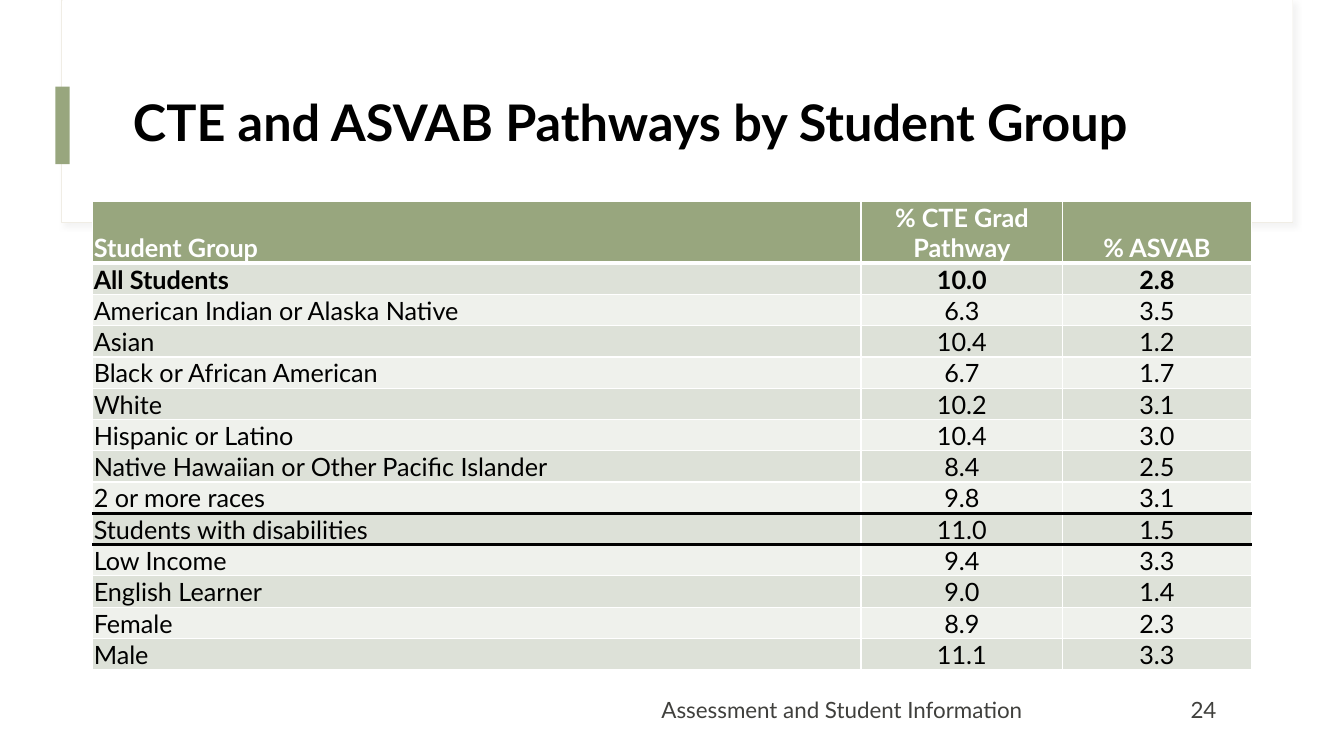
from dataclasses import dataclass
from typing import Optional

import pptx
import pptx.dml.color
import pptx.enum.shapes
import pptx.enum.text
import pptx.oxml
import pptx.oxml.ns
import pptx.util
from pptx.util import Inches

FONT = "Lato"
GREEN, DARK_BAND, LIGHT_BAND = "98A67E", "DDE1D8", "EFF1EC"
WHITE, BLACK, GREY = "FFFFFF", "000000", "40403D"
ALIGN = pptx.enum.text.PP_ALIGN
ANCHOR = pptx.enum.text.MSO_ANCHOR


@dataclass
class Panel:
    left: float
    top: float
    width: float
    height: float
    fill: str
    line: Optional[str] = None
    shadow: bool = False


@dataclass
class Label:
    text: str
    left: float
    top: float
    width: float
    height: float
    size: float = 16
    color: str = GREY
    bold: bool = False
    align: ALIGN = ALIGN.LEFT
    line_spacing: float = 1.0


@dataclass
class GroupRow:
    name: str
    cte: str
    asvab: str
    ruled_above: bool = False
    ruled_below: bool = False


PANELS = [
    Panel(0.61, 0, 12.21, 2.21, WHITE, line="F0EDE5", shadow=True),
    Panel(0.62, 0, 12.2, 2.2, WHITE),
    Panel(0.55, 0.86, 0.14, 0.77, GREEN),
]
LABELS = [
    Label("CTE and ASVAB Pathways by Student Group", 1.22, 0.6, 11.12, 1.29,
          size=36, color=BLACK, bold=True, line_spacing=0.9),
    Label("Assessment and Student Information", 3.88, 6.84, 6.36, 0.4, align=ALIGN.RIGHT),
    Label("24", 11.71, 6.84, 0.7, 0.4),
]
COLUMN_WIDTHS = [7.62, 2, 1.87]
GROUP_ROWS = [
    GroupRow("Student Group", "% CTE Grad Pathway", "% ASVAB"),
    GroupRow("All Students", "10.0", "2.8"),
    GroupRow("American Indian or Alaska Native", "6.3", "3.5"),
    GroupRow("Asian", "10.4", "1.2"),
    GroupRow("Black or African American", "6.7", "1.7"),
    GroupRow("White", "10.2", "3.1"),
    GroupRow("Hispanic or Latino", "10.4", "3.0"),
    GroupRow("Native Hawaiian or Other Pacific Islander", "8.4", "2.5"),
    GroupRow("2 or more races", "9.8", "3.1", ruled_below=True),
    GroupRow("Students with disabilities", "11.0", "1.5", ruled_above=True, ruled_below=True),
    GroupRow("Low Income", "9.4", "3.3", ruled_above=True),
    GroupRow("English Learner", "9.0", "1.4"),
    GroupRow("Female", "8.9", "2.3"),
    GroupRow("Male", "11.1", "3.3"),
]


def rgb(color: str) -> pptx.dml.color.RGBColor:
    return pptx.dml.color.RGBColor.from_string(color)


def write_text(frame, text: str, *, size: float, color: str, bold: bool = False,
               align: ALIGN = ALIGN.LEFT, line_spacing: float = 1.0) -> None:
    frame.word_wrap = True
    paragraph = frame.paragraphs[0]
    paragraph.alignment = align
    paragraph.line_spacing = line_spacing
    run = paragraph.add_run()
    run.text = text
    run.font.name = FONT
    run.font.size = pptx.util.Pt(size)
    run.font.bold = bold
    run.font.color.rgb = rgb(color)


def add_soft_shadow(shape) -> None:
    effects = shape._element.spPr.find(pptx.oxml.ns.qn("a:effectLst"))
    effects.append(pptx.oxml.parse_xml(
        f'<a:outerShdw {pptx.oxml.ns.nsdecls("a")} blurRad="50800" dist="38100" '
        'dir="2700000" algn="tl" rotWithShape="0"><a:srgbClr val="D9D9D9">'
        '<a:alpha val="30000"/></a:srgbClr></a:outerShdw>'))


def draw_panel(slide, panel: Panel) -> None:
    shape = slide.shapes.add_shape(
        pptx.enum.shapes.MSO_SHAPE.RECTANGLE, Inches(panel.left), Inches(panel.top),
        Inches(panel.width), Inches(panel.height))
    shape.shadow.inherit = False
    shape.fill.solid()
    shape.fill.fore_color.rgb = rgb(panel.fill)
    if panel.line:
        shape.line.color.rgb = rgb(panel.line)
        shape.line.width = pptx.util.Pt(0.75)
    else:
        shape.line.fill.background()
    if panel.shadow:
        add_soft_shadow(shape)


def draw_label(slide, label: Label) -> None:
    box = slide.shapes.add_textbox(Inches(label.left), Inches(label.top),
                                   Inches(label.width), Inches(label.height))
    box.text_frame.vertical_anchor = ANCHOR.MIDDLE
    write_text(box.text_frame, label.text, size=label.size, color=label.color,
               bold=label.bold, align=label.align, line_spacing=label.line_spacing)


def add_border(cell, side: str, color: str, width: float) -> None:
    cell._tc.get_or_add_tcPr().append(pptx.oxml.parse_xml(
        f'<a:ln{side} {pptx.oxml.ns.nsdecls("a")} w="{pptx.util.Pt(width)}">'
        f'<a:solidFill><a:srgbClr val="{color}"/></a:solidFill></a:ln{side}>'))


def format_cell(cell, row: GroupRow, fill: str, is_header: bool) -> None:
    """Set the margins, borders and fill of a cell."""
    cell.vertical_anchor = ANCHOR.BOTTOM
    cell.margin_left = cell.margin_right = cell.margin_top = Inches(0.01)
    cell.margin_bottom = 0
    thin, rule = (WHITE, 1), (BLACK, 2.25)
    bottom = (WHITE, 3) if is_header else rule if row.ruled_below else thin
    top = rule if row.ruled_above else thin
    for side, border in (("L", thin), ("R", thin), ("T", top), ("B", bottom)):
        add_border(cell, side, *border)
    cell.fill.solid()
    cell.fill.fore_color.rgb = rgb(fill)


def draw_group_table(slide) -> None:
    table = slide.shapes.add_table(
        len(GROUP_ROWS), len(COLUMN_WIDTHS), Inches(0.92), Inches(2),
        Inches(sum(COLUMN_WIDTHS)), Inches(4.6)).table
    table.horz_banding = False
    for column, width in zip(table.columns, COLUMN_WIDTHS):
        column.width = Inches(width)
    for row_index, row in enumerate(GROUP_ROWS):
        is_header = row_index == 0
        table.rows[row_index].height = Inches(0.57 if is_header else 0.3)
        fill = GREEN if is_header else DARK_BAND if row_index % 2 else LIGHT_BAND
        for column_index, text in enumerate((row.name, row.cte, row.asvab)):
            cell = table.cell(row_index, column_index)
            format_cell(cell, row, fill, is_header)
            write_text(cell.text_frame, text, size=18, bold=row_index < 2,
                       color=WHITE if is_header else BLACK,
                       align=ALIGN.CENTER if column_index else ALIGN.LEFT)


def main() -> None:
    presentation = pptx.Presentation()
    presentation.slide_width = Inches(13.33)
    presentation.slide_height = Inches(7.5)
    slide = presentation.slides.add_slide(presentation.slide_layouts[6])
    for panel in PANELS:
        draw_panel(slide, panel)
    draw_group_table(slide)
    for label in LABELS:
        draw_label(slide, label)
    presentation.save("out.pptx")


if __name__ == "__main__":
    main()
